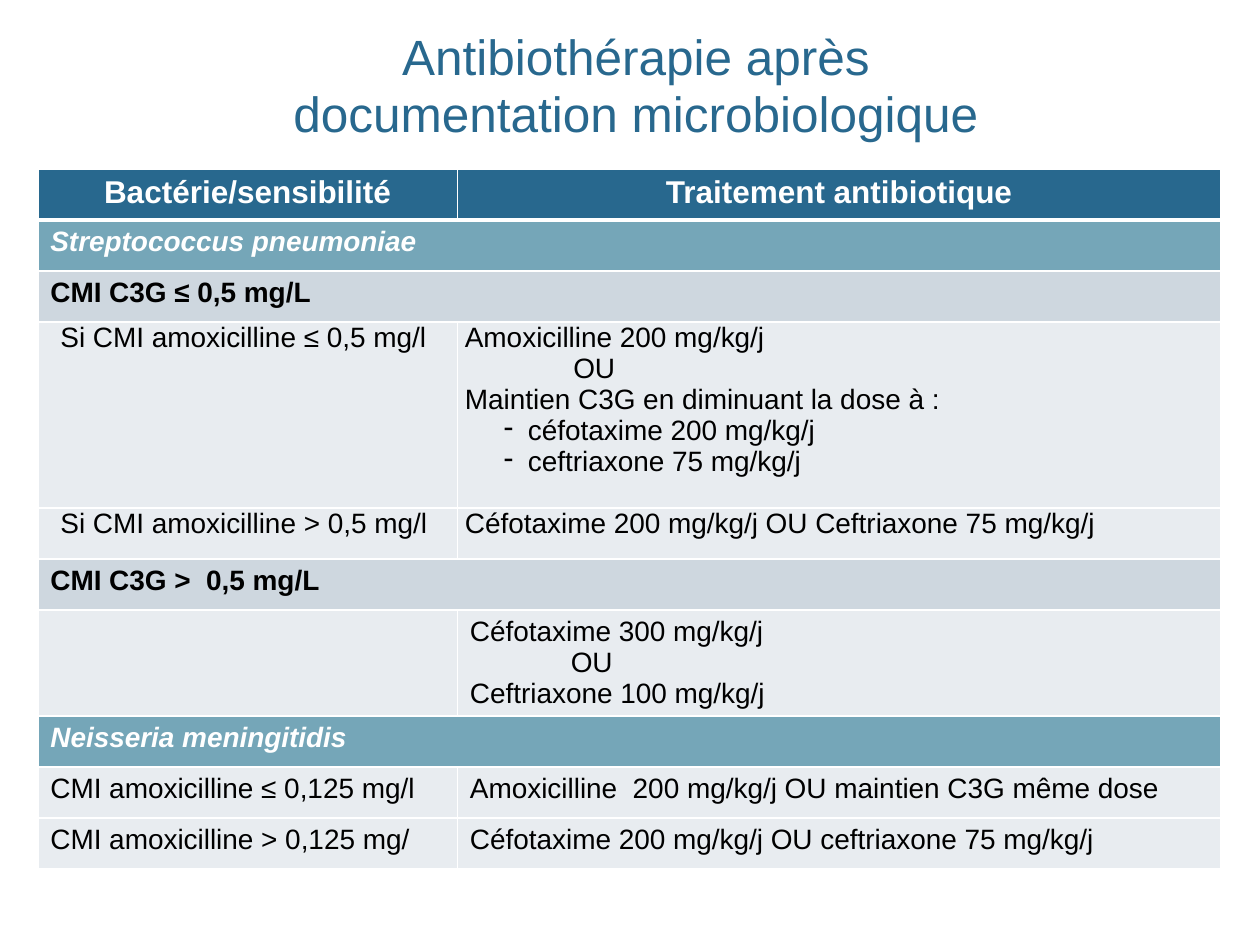
from lxml import etree
from pptx import Presentation, util as u
from pptx.dml.color import RGBColor
from pptx.enum import text
from pptx.oxml.ns import qn

NAVY = RGBColor(0x28, 0x68, 0x8E)
TEAL = RGBColor(0x75, 0xA6, 0xB8)
GREY = RGBColor(0xCE, 0xD7, 0xDF)
PALE = RGBColor(0xE8, 0xEC, 0xF0)
WHITE = RGBColor(0xFF, 0xFF, 0xFF)
BLACK = RGBColor(0, 0, 0)
MID, LEFT, JUST = text.PP_ALIGN.CENTER, text.PP_ALIGN.LEFT, text.PP_ALIGN.JUSTIFY

# Row kinds: fill, font colour, size, bold, italic, alignment, tight insets
KINDS = {
    "head": (NAVY, WHITE, 18, True, False, MID, False),
    "germ": (TEAL, WHITE, 16, True, True, LEFT, False),
    "group": (GREY, BLACK, 16, True, False, LEFT, False),
    "case": (PALE, BLACK, 16, False, False, JUST, True),
    "dose": (PALE, BLACK, 16, False, False, JUST, False),
    "plain": (PALE, BLACK, 16, False, False, LEFT, False),
}

# Rows: kind, height in lines of the grid, then the lines of each cell;
# a line is (left indent, words), and a leading "-" makes a bullet
LINE = 0.405
ROWS = [
    ("head", 1, [(0, "Bactérie/sensibilité")], [(0, "Traitement antibiotique")]),
    ("germ", 1, [(0, "Streptococcus pneumoniae")]),
    ("group", 1, [(0, "CMI C3G ≤ 0,5 mg/L")]),
    ("case", 3.65, [(0.12, "Si CMI amoxicilline ≤ 0,5 mg/l")],
     [(0, "Amoxicilline 200 mg/kg/j"),
      (0.86, "OU"),
      (0, "Maintien C3G en diminuant la dose à :"),
      (0.5, "-céfotaxime 200 mg/kg/j"),
      (0.5, "-ceftriaxone 75 mg/kg/j")]),
    ("case", 1, [(0.12, "Si CMI amoxicilline > 0,5 mg/l")],
     [(0, "Céfotaxime 200 mg/kg/j OU Ceftriaxone 75 mg/kg/j")]),
    ("group", 1, [(0, "CMI C3G >  0,5 mg/L")]),
    ("dose", 2.08, [],
     [(0, "Céfotaxime 300 mg/kg/j"),
      (0.8, "OU"),
      (0, "Ceftriaxone 100 mg/kg/j")]),
    ("germ", 1, [(0, "Neisseria meningitidis")]),
    ("plain", 1, [(0, "CMI amoxicilline ≤ 0,125 mg/l")],
     [(0, "Amoxicilline  200 mg/kg/j OU maintien C3G même dose")]),
    ("plain", 1, [(0, "CMI amoxicilline > 0,125 mg/")],
     [(0, "Céfotaxime 200 mg/kg/j OU ceftriaxone 75 mg/kg/j")]),
]


def style(run, size, color, bold=False, slant=False):
    font = run.font
    font.name, font.size = "Arial", u.Pt(size)
    font.bold, font.italic = bold, slant
    font.color.rgb = color


def edge(cell, low):
    """White borders, the bottom one of the given width in points."""
    props = cell._tc.get_or_add_tcPr()
    for tag, wide in (("lnL", 1), ("lnR", 1), ("lnT", 1), ("lnB", low)):
        line = etree.SubElement(props, qn("a:" + tag), w=str(u.Pt(wide)))
        fill = etree.SubElement(line, qn("a:solidFill"))
        etree.SubElement(fill, qn("a:srgbClr"), val=str(WHITE))


prs = Presentation()
prs.slide_width, prs.slide_height = u.Inches(10), u.Inches(7.5)
slide = prs.slides.add_slide(prs.slide_layouts[5])

# Title
title = slide.shapes.title
title.left, title.top = u.Inches(0.42), u.Inches(0.19)
title.width, title.height = u.Inches(9.26), u.Inches(1.21)
frame = title.text_frame
frame.word_wrap = True
frame.auto_size = text.MSO_AUTO_SIZE.NONE
frame.vertical_anchor = text.MSO_ANCHOR.TOP
for i, words in enumerate(["Antibiothérapie après", "documentation microbiologique"]):
    para = frame.add_paragraph() if i else frame.paragraphs[0]
    para.alignment, para.line_spacing = MID, 0.96
    run = para.add_run()
    run.text = words
    style(run, 28.3, NAVY)

# Table grid
tall = sum(row[1] for row in ROWS) * LINE
table = slide.shapes.add_table(len(ROWS), 2, u.Inches(0.3), u.Inches(1.34),
                               u.Inches(9.39), u.Inches(tall)).table
for col, wide in zip(table.columns, (3.33, 6.06)):
    col.width = u.Inches(wide)

# Table cells
for r, (kind, high, *cells) in enumerate(ROWS):
    back, color, size, bold, slant, align, tight = KINDS[kind]
    table.rows[r].height = u.Inches(high * LINE)
    if len(cells) == 1:
        table.cell(r, 0).merge(table.cell(r, 1))
    for c, lines in enumerate(cells):
        cell = table.cell(r, c)
        edge(cell, 3 if kind == "head" else 1)
        cell.fill.solid()
        cell.fill.fore_color.rgb = back
        if tight:
            cell.margin_left = cell.margin_right = u.Inches(0.06)
            cell.margin_top = cell.margin_bottom = 0
        for i, (indent, words) in enumerate(lines):
            frame = cell.text_frame
            para = frame.add_paragraph() if i else frame.paragraphs[0]
            para.alignment = align
            props = para._p.get_or_add_pPr()
            if indent:
                props.set("marL", str(u.Inches(indent)))
            if words.startswith("-"):
                props.set("indent", str(u.Inches(-0.19)))
                etree.SubElement(props, qn("a:buChar"), char="-")
            run = para.add_run()
            run.text = words.lstrip("-")
            style(run, size, color, bold, slant)

prs.save("out.pptx")
